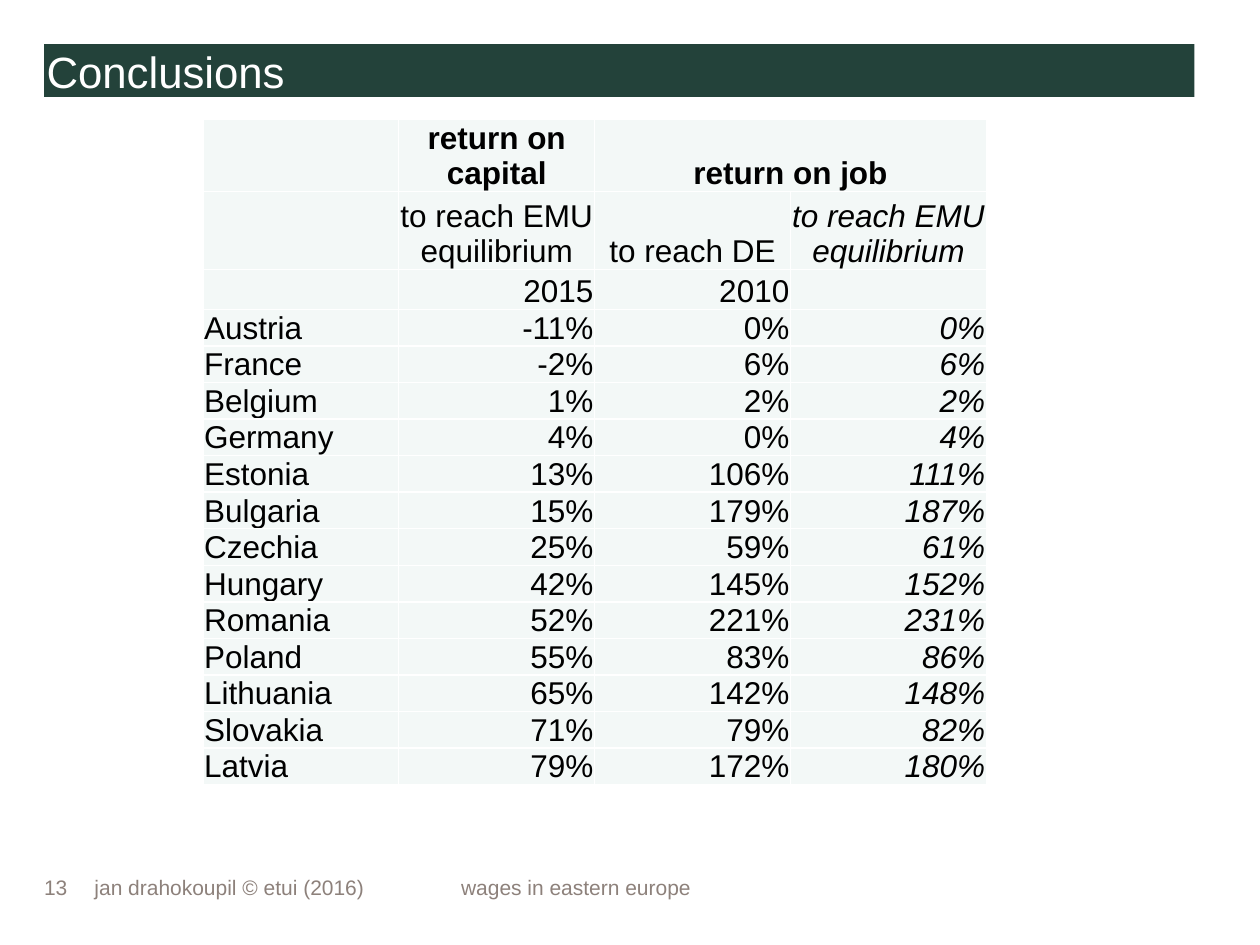
from collections import namedtuple

from lxml import etree
from pptx import Presentation
from pptx import util as u
from pptx.dml.color import RGBColor
from pptx.enum import shapes, text
from pptx.oxml import ns

Box = namedtuple("Box", "left top width height")

GRID_COLUMNS, GRID_ROWS = 1000, 750
SLIDE_WIDTH, SLIDE_HEIGHT = u.Inches(10), u.Inches(7.5)
COLORS = {
    "bar": "23423A",
    "title": "FFFFFF",
    "cell": "F3F8F7",
    "border": "FFFFFF",
    "body": "000000",
    "footer": "8D817B",
}
FORMATS = {
    "title": {"size": u.Pt(25), "name": "Arial"},
    "body": {"size": u.Pt(18), "name": "Arial"},
    "footer": {"size": u.Pt(12), "name": "Arial"},
}
LEFT, CENTER, RIGHT = text.PP_ALIGN.LEFT, text.PP_ALIGN.CENTER, text.PP_ALIGN.RIGHT

HEADERS = [
    ["", "return on capital", "return on job", ""],
    ["", "to reach EMU equilibrium", "to reach DE", "to reach EMU equilibrium"],
]
YEARS = ["", "2015", "2010", ""]
RETURNS = [
    ("Austria", -11, 0, 0),
    ("France", -2, 6, 6),
    ("Belgium", 1, 2, 2),
    ("Germany", 4, 0, 4),
    ("Estonia", 13, 106, 111),
    ("Bulgaria", 15, 179, 187),
    ("Czechia", 25, 59, 61),
    ("Hungary", 42, 145, 152),
    ("Romania", 52, 221, 231),
    ("Poland", 55, 83, 86),
    ("Lithuania", 65, 142, 148),
    ("Slovakia", 71, 79, 82),
    ("Latvia", 79, 172, 180),
]


def across(columns):
    return round(SLIDE_WIDTH * columns / GRID_COLUMNS)


def down(rows):
    return round(SLIDE_HEIGHT * rows / GRID_ROWS)


def place(box):
    return across(box.left), down(box.top), across(box.width), down(box.height)


def set_attributes(target, values):
    for name, value in values.items():
        setattr(target, name, value)


def write(paragraph, words, style, alignment=LEFT, **emphasis):
    paragraph.alignment = alignment
    run = paragraph.add_run()
    run.text = words
    set_attributes(run.font, {**FORMATS[style], **emphasis})
    run.font.color.rgb = RGBColor.from_string(COLORS[style])


def set_frame(frame, side_margin=0):
    set_attributes(frame, {
        "margin_left": across(side_margin),
        "margin_right": across(side_margin),
        "margin_top": 0,
        "margin_bottom": 0,
        "vertical_anchor": text.MSO_ANCHOR.BOTTOM,
        "word_wrap": True,
    })


def add_title(slide, box):
    bar = slide.shapes.add_shape(shapes.MSO_SHAPE.RECTANGLE, *place(box))
    bar.shadow.inherit = False
    bar.fill.solid()
    bar.fill.fore_color.rgb = RGBColor.from_string(COLORS["bar"])
    bar.line.fill.background()
    set_frame(bar.text_frame, 2)
    write(bar.text_frame.paragraphs[0], "Conclusions", "title")


def style_cell(cell):
    set_attributes(cell, {
        "margin_left": across(1),
        "margin_right": across(1),
        "margin_top": down(1),
        "margin_bottom": 0,
        "vertical_anchor": text.MSO_ANCHOR.BOTTOM,
    })
    properties = cell._tc.get_or_add_tcPr()
    for side in ("lnL", "lnR", "lnT", "lnB"):
        border = etree.SubElement(properties, ns.qn(f"a:{side}"), w=str(u.Pt(1)))
        fill = etree.SubElement(border, ns.qn("a:solidFill"))
        etree.SubElement(fill, ns.qn("a:srgbClr"), val=COLORS["border"])
    cell.fill.solid()
    cell.fill.fore_color.rgb = RGBColor.from_string(COLORS["cell"])


def add_returns_table(slide, box):
    percentages = [[country, *(f"{value}%" for value in values)]
                   for country, *values in RETURNS]
    rows = [*HEADERS, YEARS, *percentages]
    column_count = len(YEARS)
    graphic_frame = slide.shapes.add_table(len(rows), column_count, *place(box))
    table = graphic_frame.table
    heights = [45, 62] + [25] * (len(rows) - len(HEADERS))
    for table_row, height in zip(table.rows, heights):
        table_row.height = down(height)
    for column in table.columns:
        column.width = across(box.width / column_count)
    graphic_frame.height = down(box.height)

    for row_index, row in enumerate(rows):
        for column_index, words in enumerate(row):
            cell = table.cell(row_index, column_index)
            style_cell(cell)
            if not words:
                continue
            if row_index < len(HEADERS):
                alignment = CENTER
            else:
                alignment = RIGHT if column_index else LEFT
            write(cell.text_frame.paragraphs[0], words, "body", alignment,
                  bold=row_index == 0, italic=column_index == column_count - 1)
    table.cell(0, 2).merge(table.cell(0, 3))


def add_footer(slide, box):
    parts = [
        (0, 39, "13"),
        (40, 284, "jan drahokoupil © etui (2016)"),
        (331, 496, "wages in eastern europe"),
    ]
    for offset, width, words in parts:
        part = Box(box.left + offset, box.top, width, box.height)
        frame = slide.shapes.add_textbox(*place(part)).text_frame
        set_frame(frame)
        write(frame.paragraphs[0], words, "footer")


def main():
    presentation = Presentation()
    presentation.slide_width, presentation.slide_height = SLIDE_WIDTH, SLIDE_HEIGHT
    slide = presentation.slides.add_slide(presentation.slide_layouts[6])
    add_title(slide, Box(35, 35, 913, 42))
    add_returns_table(slide, Box(161, 95, 622, 557))
    add_footer(slide, Box(35, 679, 827, 35))
    presentation.save("out.pptx")


if __name__ == "__main__":
    main()
